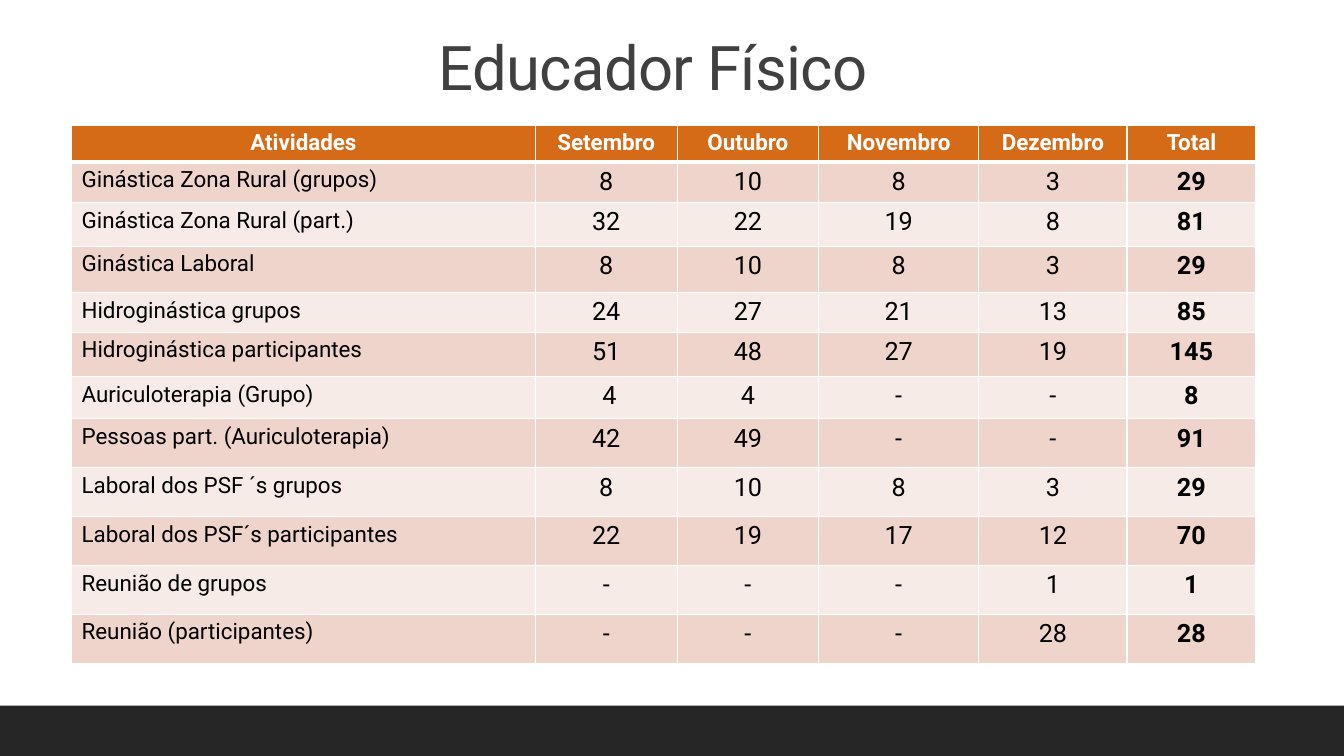
from lxml.etree import SubElement
from pptx import Presentation
from pptx.dml.color import RGBColor
from pptx.enum.shapes import MSO_SHAPE
from pptx.enum.text import MSO_ANCHOR, MSO_AUTO_SIZE, PP_ALIGN
from pptx.oxml.ns import qn
from pptx.util import Pt

FONT = "Roboto"
COLORS = {
    "bar": "262626",
    "title": "404040",
    "head": "D56A17",
    "odd": "EFD4CC",
    "even": "F7EBE8",
    "white": "FFFFFF",
    "black": "000000",
}
COLS = [331.2, 101.5, 100.9, 114.5, 105.9, 92]
ROWS = [26.6, 28.8, 31.2, 33.1, 27.4, 31.7, 30.2] + [34.9] * 5
DATA = [
    ["Atividades", "Setembro", "Outubro", "Novembro", "Dezembro", "Total"],
    ["Ginástica Zona Rural (grupos)", "8", "10", "8", "3", "29"],
    ["Ginástica Zona Rural (part.)", "32", "22", "19", "8", "81"],
    ["Ginástica Laboral", "8", "10", "8", "3", "29"],
    ["Hidroginástica grupos", "24", "27", "21", "13", "85"],
    ["Hidroginástica participantes", "51", "48", "27", "19", "145"],
    ["Auriculoterapia (Grupo)", " 4", "4", "-", "-", "8"],
    ["Pessoas part. (Auriculoterapia)", "42", "49", "-", "-", "91"],
    ["Laboral dos PSF ´s grupos", "8", "10", "8", "3", "29"],
    ["Laboral dos PSF´s participantes", "22", "19", "17", "12", "70"],
    ["Reunião de grupos", "-", "-", "-", "1", "1"],
    ["Reunião (participantes)", "-", "-", "-", "28", "28"],
]


def color(name):
    return RGBColor.from_string(COLORS[name])


def add_run(para, text, size, tint, bold=False):
    run = para.add_run()
    run.text = text
    run.font.name = FONT
    run.font.size = Pt(size)
    run.font.bold = bold
    run.font.color.rgb = color(tint)
    return run


def add_bar(slide):
    bar = slide.shapes.add_shape(MSO_SHAPE.RECTANGLE, 0, Pt(504), Pt(960), Pt(36))
    bar.shadow.inherit = False
    bar.fill.solid()
    bar.fill.fore_color.rgb = color("bar")
    bar.line.fill.background()


def set_title(slide, text):
    title = slide.shapes.title
    title.left, title.top = Pt(86.4), Pt(22.3)
    title.width, title.height = Pt(792), Pt(55.4)
    frame = title.text_frame
    frame.word_wrap = True
    frame.auto_size = MSO_AUTO_SIZE.NONE
    frame.vertical_anchor = MSO_ANCHOR.BOTTOM
    frame.margin_right = Pt(39)
    para = frame.paragraphs[0]
    para.alignment = PP_ALIGN.CENTER
    para.line_spacing = 0.9
    run = add_run(para, text, 44, "title")
    run.font._element.set("spc", "-50")


def set_border(cell, widths):
    props = cell._tc.get_or_add_tcPr()
    for side, width in widths.items():
        line = SubElement(props, qn(f"a:ln{side}"), w=str(Pt(width)))
        fill = SubElement(line, qn("a:solidFill"))
        SubElement(fill, qn("a:srgbClr"), val=COLORS["white"])


def fill_cell(cell, text, row, col):
    head = row == 0
    set_border(cell, {"L": 1, "R": 1, "T": 3 if row == 1 else 1, "B": 3 if head else 1})
    cell.fill.solid()
    cell.fill.fore_color.rgb = color("head" if head else "odd" if row % 2 else "even")
    para = cell.text_frame.paragraphs[0]
    para.alignment = PP_ALIGN.CENTER if head or col else PP_ALIGN.LEFT
    size = 16 if head or col == 0 else 18
    bold = head or col == len(COLS) - 1
    add_run(para, text, size, "white" if head else "black", bold)


def add_grid(slide):
    frame = slide.shapes.add_table(
        len(ROWS), len(COLS), Pt(51.1), Pt(89.3), Pt(sum(COLS)), Pt(sum(ROWS))
    )
    table = frame.table
    table.horz_banding = False
    for column, width in zip(table.columns, COLS):
        column.width = Pt(width)
    for row, height in enumerate(ROWS):
        table.rows[row].height = Pt(height)
        for col, text in enumerate(DATA[row]):
            fill_cell(table.cell(row, col), text, row, col)


def main():
    deck = Presentation()
    deck.slide_width, deck.slide_height = Pt(960), Pt(540)
    slide = deck.slides.add_slide(deck.slide_layouts[5])
    add_bar(slide)
    set_title(slide, "Educador Físico")
    add_grid(slide)
    deck.save("out.pptx")


if __name__ == "__main__":
    main()
